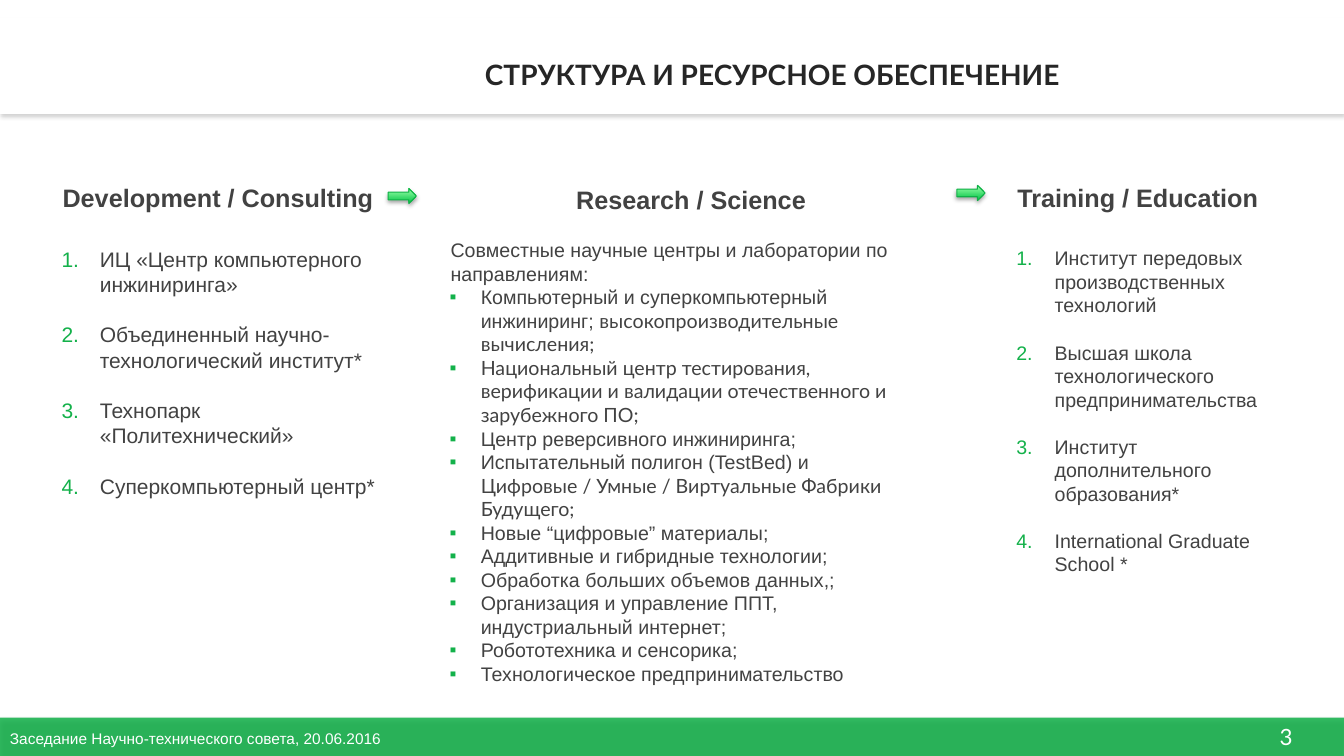
from dataclasses import dataclass

from lxml import etree
from pptx import Presentation
from pptx.dml.color import RGBColor
from pptx.enum.shapes import MSO_SHAPE
from pptx.enum.text import MSO_ANCHOR, PP_ALIGN
from pptx.oxml.ns import qn
from pptx.util import Inches, Pt

RECTANGLE, ARROW = MSO_SHAPE.RECTANGLE, MSO_SHAPE.RIGHT_ARROW
LEFT, CENTER = PP_ALIGN.LEFT, PP_ALIGN.CENTER
TOP, MIDDLE, BOTTOM = MSO_ANCHOR.TOP, MSO_ANCHOR.MIDDLE, MSO_ANCHOR.BOTTOM


@dataclass(frozen=True)
class Theme:
    """Colours, fonts and type sizes of the deck."""
    green: str = "13B14A"
    arrow_line: str = "0FB147"
    arrow_dark: str = "00C444"
    arrow_light: str = "9AFFA9"
    white: str = "FFFFFF"
    ink: str = "262626"
    text: str = "424242"
    black: str = "000000"
    grey: str = "808080"
    sans: str = "Arial"
    display: str = "Lato"
    title: int = 20
    heading: int = 18
    number: int = 16
    large: int = 15
    body: int = 14
    footer: int = 11
    leading: float = 1.2


@dataclass(frozen=True)
class Box:
    """A rectangle whose inner boxes are given in percent of its size."""
    left: float
    top: float
    width: float
    height: float

    def share(self, left, top, width, height):
        """Return the box at the given percentages of this one."""
        return Box(self.left + self.width * left / 100, self.top + self.height * top / 100,
                   self.width * width / 100, self.height * height / 100)

    def place(self):
        """Return left, top, width and height as lengths."""
        return [Inches(side) for side in (self.left, self.top, self.width, self.height)]


THEME = Theme()
SLIDE = Box(0, 0, 13.33, 7.5)

DEVELOPMENT = ["ИЦ «Центр компьютерного инжиниринга»",
               "Объединенный научно-технологический институт*",
               "Технопарк «Политехнический»",
               "Суперкомпьютерный центр*"]
TRAINING = ["Институт передовых производственных технологий",
            "Высшая школа технологического предпринимательства",
            "Институт дополнительного образования*",
            "International Graduate School *"]
RESEARCH_INTRO = "Совместные научные центры и лаборатории по направлениям:"
RESEARCH = [
    ("Компьютерный и суперкомпьютерный инжиниринг; ", "высокопроизводительные вычисления;"),
    ("", "Национальный центр тестирования, верификации и валидации отечественного и зарубежного ПО;"),
    ("Центр реверсивного инжиниринга;", ""),
    ("Испытательный полигон (TestBed) и\n", "Цифровые / Умные / Виртуальные Фабрики Будущего;"),
    ("Новые “цифровые” материалы;", ""),
    ("Аддитивные и гибридные технологии;", ""),
    ("Обработка больших объемов данных,;", ""),
    ("Организация и управление ППТ,\nиндустриальный интернет;", ""),
    ("Робототехника и сенсорика;", ""),
    ("Технологическое предпринимательство", "")]


def add_text(para, text, size=THEME.body, font=THEME.sans, color=THEME.text, bold=False, align=LEFT):
    """Add text to a paragraph in the given format."""
    para.alignment = align
    for index, line in enumerate(text.split("\n")):
        if index:
            para.add_line_break()
        if line:
            span = para.add_run()
            span.text = line
            span.font.size, span.font.name, span.font.bold = Pt(size), font, bold
            span.font.color.rgb = RGBColor.from_string(color)


def set_frame(shape, anchor=TOP, inset=None):
    """Prepare a shape for wrapped text and return its text frame."""
    frame = shape.text_frame
    frame.word_wrap, frame.vertical_anchor = True, anchor
    if inset is not None:
        frame.margin_left = frame.margin_right = frame.margin_top = frame.margin_bottom = inset
    return frame


def set_indent(para, margin, hanging=0, marker=None, **marker_values):
    """Set the indents of a paragraph and its optional green marker."""
    properties = para._p.get_or_add_pPr()
    properties.set("marL", str(Inches(margin)))
    properties.set("indent", str(-Inches(hanging)))
    if marker:
        color = etree.SubElement(properties, qn("a:buClr"))
        etree.SubElement(color, qn("a:srgbClr"), val=THEME.green)
        etree.SubElement(properties, qn("a:buFont"), typeface=THEME.sans)
        etree.SubElement(properties, qn(marker), **marker_values)


def set_spacing(para, size, before=0):
    """Fix the line height and the space before in points."""
    para.line_spacing = Pt(size * THEME.leading)
    if before:
        para.space_before = Pt(before * THEME.leading)


def add_alpha(color, percent):
    """Make a colour element partly transparent."""
    etree.SubElement(color, qn("a:alpha"), val=str(percent * 1000))


def add_shadow(shape, color):
    """Give a shape a soft shadow below it."""
    shape.shadow.inherit = False
    effects = shape._element.spPr.find(qn("a:effectLst"))
    shadow = etree.SubElement(effects, qn("a:outerShdw"), blurRad=str(Pt(3.1)),
                              dist=str(Pt(1.8)), dir="5400000", rotWithShape="0")
    add_alpha(etree.SubElement(shadow, qn("a:srgbClr"), val=color), 35)


def add_band(slide, box, fill, shadow):
    """Add a shadowed band without an outline."""
    band = slide.shapes.add_shape(RECTANGLE, *box.place())
    band.fill.solid()
    band.fill.fore_color.rgb = RGBColor.from_string(fill)
    band.line.fill.background()
    add_shadow(band, shadow)
    return band


def add_header(slide, box):
    """Add the white header band and the title over it."""
    add_band(slide, box, THEME.white, THEME.grey)
    title = slide.shapes.title
    slide.shapes._spTree.append(title._element)
    title.left, title.top, title.width, title.height = box.share(35.33, -20, 50.25, 101).place()
    para = set_frame(title, BOTTOM).paragraphs[0]
    add_text(para, "СТРУКТУРА И РЕСУРСНОЕ ОБЕСПЕЧЕНИЕ", size=THEME.title,
             font=THEME.display, color=THEME.ink, bold=True)


def add_footer(slide, box):
    """Add the green footer with the meeting and the slide number."""
    band = add_band(slide, box, THEME.green, THEME.black)
    add_alpha(band._element.spPr.find(qn("a:solidFill"))[0], 86)
    number = slide.shapes.add_textbox(*box.share(92.27, 2, 6.83, 97).place())
    add_text(set_frame(number, MIDDLE).paragraphs[0], "3", size=THEME.number,
             font=THEME.display, color=THEME.white, align=CENTER)
    meeting = slide.shapes.add_textbox(*box.share(0, 5, 93.25, 97).place())
    add_text(set_frame(meeting, MIDDLE).paragraphs[0],
             "Заседание Научно-технического совета, 20.06.2016",
             size=THEME.footer, color=THEME.white)


def add_column(slide, box, heading, align=LEFT):
    """Add a column with its heading and return its text frame."""
    frame = set_frame(slide.shapes.add_textbox(*box.place()), inset=0)
    para = frame.paragraphs[0]
    set_indent(para, 0.07)
    set_spacing(para, THEME.heading)
    add_text(para, heading, size=THEME.heading, bold=True, align=align)
    return frame


def add_numbered_column(slide, box, heading, items, size):
    """Add a column with a numbered list."""
    frame = add_column(slide, box, heading)
    for index, item in enumerate(items):
        para = frame.add_paragraph()
        set_indent(para, 0.44, 0.38, "a:buAutoNum", type="arabicPeriod")
        set_spacing(para, size, before=size if index else THEME.title)
        add_text(para, item, size=size)


def add_research_column(slide, box):
    """Add the middle column with its introduction and bullets."""
    frame = add_column(slide, box, "Research / Science", align=CENTER)
    intro = frame.add_paragraph()
    set_indent(intro, 0.07)
    set_spacing(intro, THEME.body, before=THEME.body)
    add_text(intro, RESEARCH_INTRO)
    for plain, display in RESEARCH:
        para = frame.add_paragraph()
        set_indent(para, 0.37, 0.31, "a:buChar", char="▪")
        set_spacing(para, THEME.body)
        add_text(para, plain)
        add_text(para, display, font=THEME.display)


def add_arrow(slide, box):
    """Add a green gradient arrow between two columns."""
    arrow = slide.shapes.add_shape(ARROW, *box.place())
    arrow.fill.gradient()
    arrow.fill.gradient_angle = 90
    for stop, color in zip(arrow.fill.gradient_stops, (THEME.arrow_dark, THEME.arrow_light)):
        stop.color.rgb = RGBColor.from_string(color)
    arrow.line.color.rgb = RGBColor.from_string(THEME.arrow_line)
    arrow.line.width = Pt(0.75)
    add_shadow(arrow, THEME.black)


def main():
    """Build the deck and save it."""
    deck = Presentation()
    deck.slide_width, deck.slide_height = Inches(SLIDE.width), Inches(SLIDE.height)
    slide = deck.slides.add_slide(deck.slide_layouts[5])
    add_footer(slide, SLIDE.share(0, 94.93, 100, 5.07))
    add_header(slide, SLIDE.share(0, 2.4, 100, 12.67))
    add_numbered_column(slide, SLIDE.share(75.17, 24.13, 20.78, 53.6),
                        "Training / Education", TRAINING, THEME.body)
    add_research_column(slide, SLIDE.share(33, 24.4, 36.31, 68.4))
    add_numbered_column(slide, SLIDE.share(4.13, 24.13, 24.76, 51.2),
                        "Development / Consulting", DEVELOPMENT, THEME.large)
    for left, top in ((28.88, 24.93), (71.19, 24.53)):
        add_arrow(slide, SLIDE.share(left, top, 2.1, 2))
    deck.save("out.pptx")


if __name__ == "__main__":
    main()
